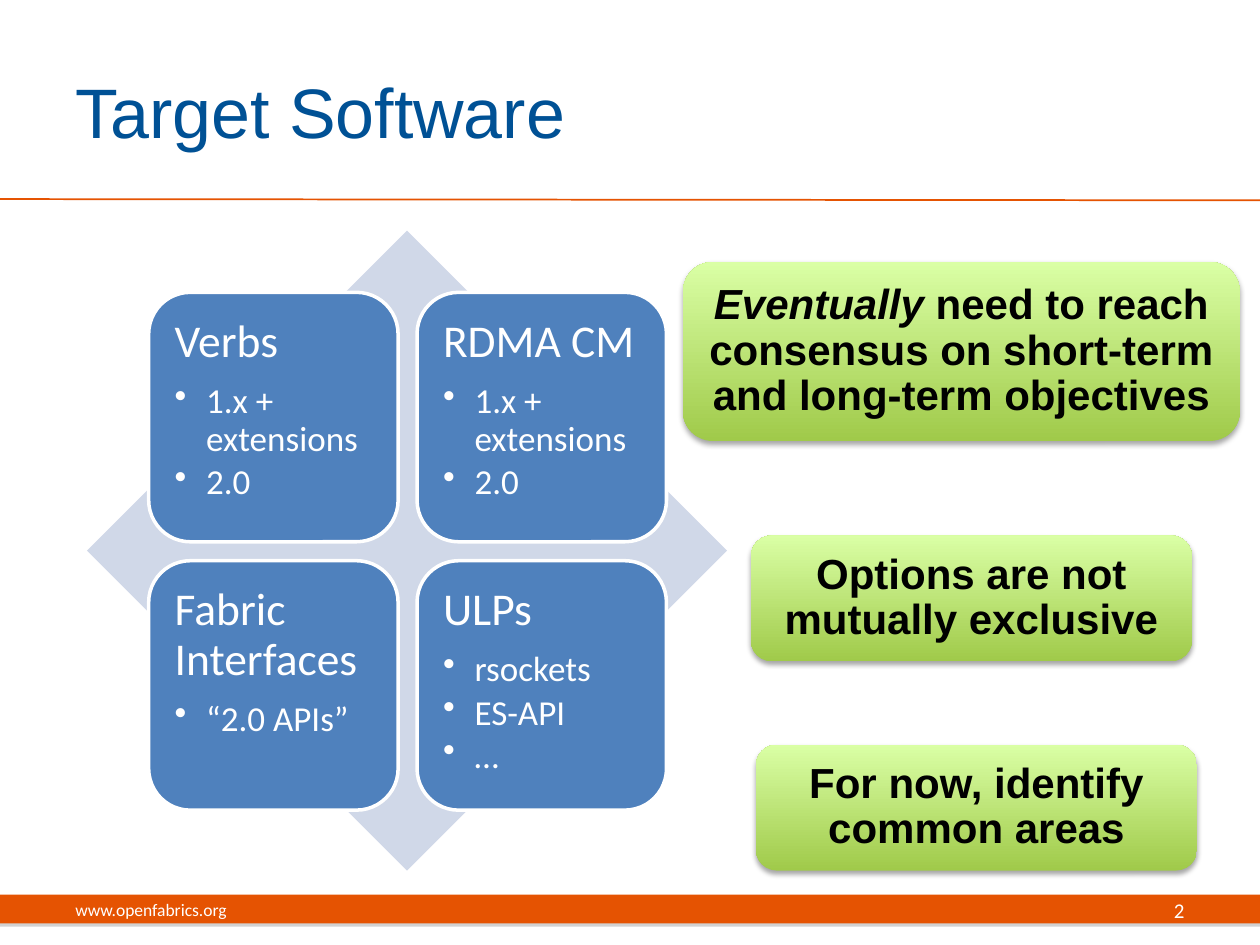
from lxml import etree
from pptx import Presentation
from pptx.dml.color import RGBColor
from pptx.enum.shapes import MSO_CONNECTOR, MSO_SHAPE
from pptx.enum.text import MSO_ANCHOR, PP_ALIGN
from pptx.oxml.ns import qn
from pptx.util import Inches, Pt

RECT, ROUND = MSO_SHAPE.RECTANGLE, MSO_SHAPE.ROUNDED_RECTANGLE
DIAMOND, LINE = MSO_SHAPE.DIAMOND, MSO_CONNECTOR.STRAIGHT
TOP, MIDDLE = MSO_ANCHOR.TOP, MSO_ANCHOR.MIDDLE
LEFT, CENTER, RIGHT = PP_ALIGN.LEFT, PP_ALIGN.CENTER, PP_ALIGN.RIGHT
rgb = RGBColor.from_string

deck = Presentation()
deck.slide_width, deck.slide_height = Inches(10), Inches(7.5)
slide = deck.slides.add_slide(deck.slide_layouts[6])
shapes = slide.shapes


def add_block(kind, box, color=None, shade=None):
    """Add a borderless shape; shade is (color, blur in pt)."""
    block = shapes.add_shape(kind, *[Inches(n) for n in box])
    block.shadow.inherit = False
    block.line.fill.background()
    if color:
        block.fill.solid()
        block.fill.fore_color.rgb = rgb(color)
    if shade:
        effects = block._element.spPr.find(qn("a:effectLst"))
        outer = etree.SubElement(effects, qn("a:outerShdw"), blurRad=str(Pt(shade[1])),
                                 dist=str(Pt(1.8)), dir="5400000", rotWithShape="0")
        tint = etree.SubElement(outer, qn("a:srgbClr"), val=shade[0])
        etree.SubElement(tint, qn("a:alpha"), val="35000")
    return block


def style(para, size, face, color, align=LEFT):
    para.alignment = align
    for run in para.runs:
        run.font.size, run.font.name = Pt(size), face
        run.font.color.rgb = rgb(color)


# Footer bar and title rule
add_block(RECT, (0, 7.1, 10, 0.23), "E55302", ("808080", 0))
rule = shapes.add_connector(LINE, Inches(0), Inches(1.58), Inches(10), Inches(1.59))
rule.line.color.rgb, rule.line.width = rgb("E55302"), Pt(1)
etree.SubElement(rule._element.spPr, qn("a:effectLst"))

# Title, web address and slide number
for text, box, size, face, color, align in [
    ("Target Software", (0.5, 0.25, 8.17, 1.25), 40, "Arial", "005195", LEFT),
    ("www.openfabrics.org", (0.5, 7.02, 3.17, 0.4), 10, "Calibri", "FFFFFF", LEFT),
    ("2", (7.17, 7.02, 2.33, 0.4), 12, "Calibri", "FFFFFF", RIGHT),
]:
    frame = shapes.add_textbox(*[Inches(n) for n in box]).text_frame
    frame.word_wrap, frame.vertical_anchor = True, MIDDLE
    frame.text = text
    style(frame.paragraphs[0], size, face, color, align)

# Diamond with a two by two grid of cards
add_block(DIAMOND, (0.69, 1.83, 5.08, 5.08), "D0D8E8")
cards = [
    ("Verbs", "1.x + extensions", "2.0"),
    ("RDMA CM", "1.x + extensions", "2.0"),
    ("Fabric Interfaces", "“2.0 APIs”"),
    ("ULPs", "rsockets", "ES-API", "…"),
]
for i, lines in enumerate(cards):
    row, col = divmod(i, 2)
    card = add_block(ROUND, (1.18 + col * 2.13, 2.32 + row * 2.13, 1.98, 1.98), "4F81BD")
    card.line.color.rgb, card.line.width = rgb("FFFFFF"), Pt(2)
    frame = card.text_frame
    frame.word_wrap, frame.vertical_anchor = True, TOP
    frame.margin_left = frame.margin_right = Inches(0.11)
    frame.margin_top = frame.margin_bottom = Inches(0.11)
    frame.text = "\n".join(lines)
    for j, para in enumerate(frame.paragraphs):
        para.line_spacing = 0.9
        para.space_after = Pt(3 if j else 9.1)
        if j:
            para.level = 1
            props = para._p.get_or_add_pPr()
            props.set("marL", str(Inches(0.25)))
            props.set("indent", str(Inches(-0.25)))
            etree.SubElement(props, qn("a:buChar"), char="•")
        style(para, 20 if j else 26, "Calibri", "FFFFFF")

# Green callouts, each with an optional italic lead
for lead, text, box in [
    ("Eventually ", "need to reach consensus on short-term and long-term objectives",
     (5.42, 2.08, 4.42, 1.42)),
    ("", "Options are not mutually exclusive", (5.96, 4.25, 3.5, 1)),
    ("", "For now, identify common areas", (6, 5.91, 3.5, 1)),
]:
    note = add_block(ROUND, box, shade=("000000", 3.1))
    note.fill.gradient()
    note.fill.gradient_angle = 90
    for stop, color in zip(note.fill.gradient_stops, ("A0CA4A", "DAFFA5")):
        stop.color.rgb = rgb(color)
    frame = note.text_frame
    frame.word_wrap, frame.vertical_anchor = True, MIDDLE
    para = frame.paragraphs[0]
    para.line_spacing = 0.9
    for part in filter(None, (lead, text)):
        run = para.add_run()
        run.text = part
        run.font.bold, run.font.italic = True, part == lead
    style(para, 24, "Arial", "000000", CENTER)

deck.save("out.pptx")
